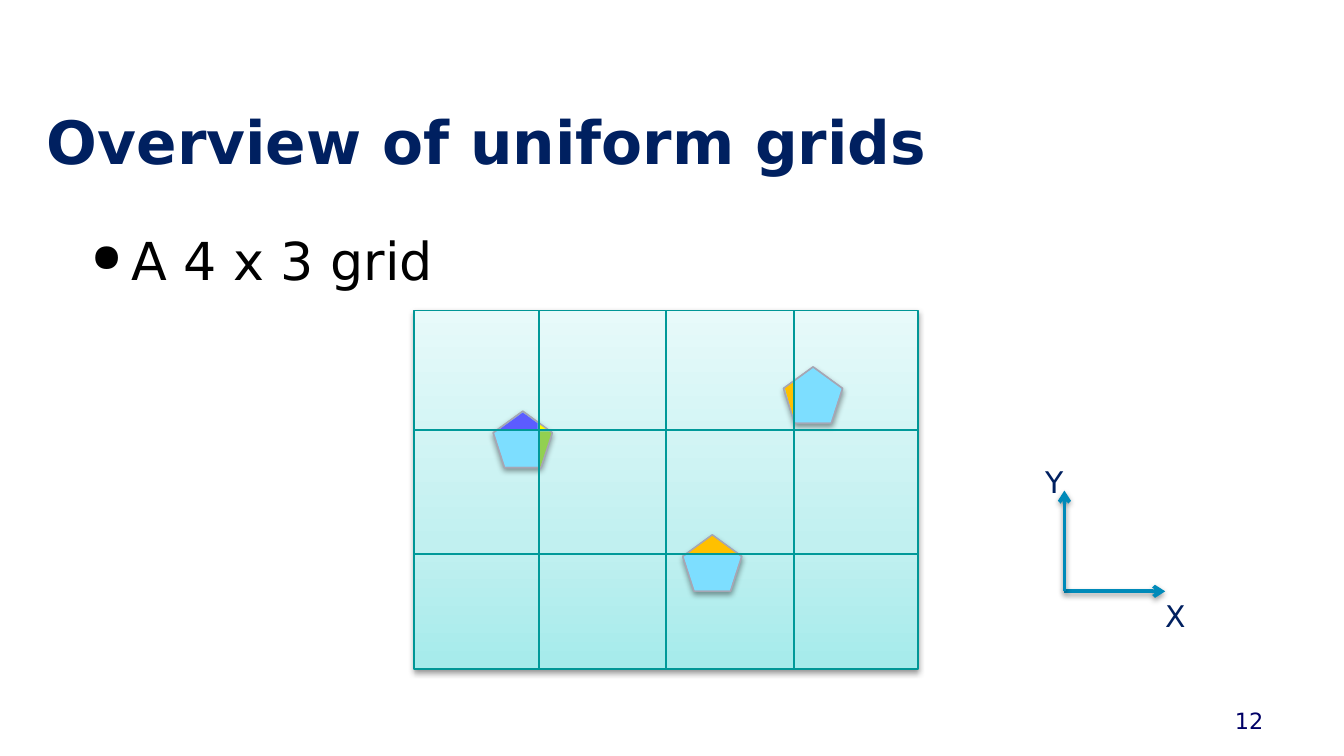
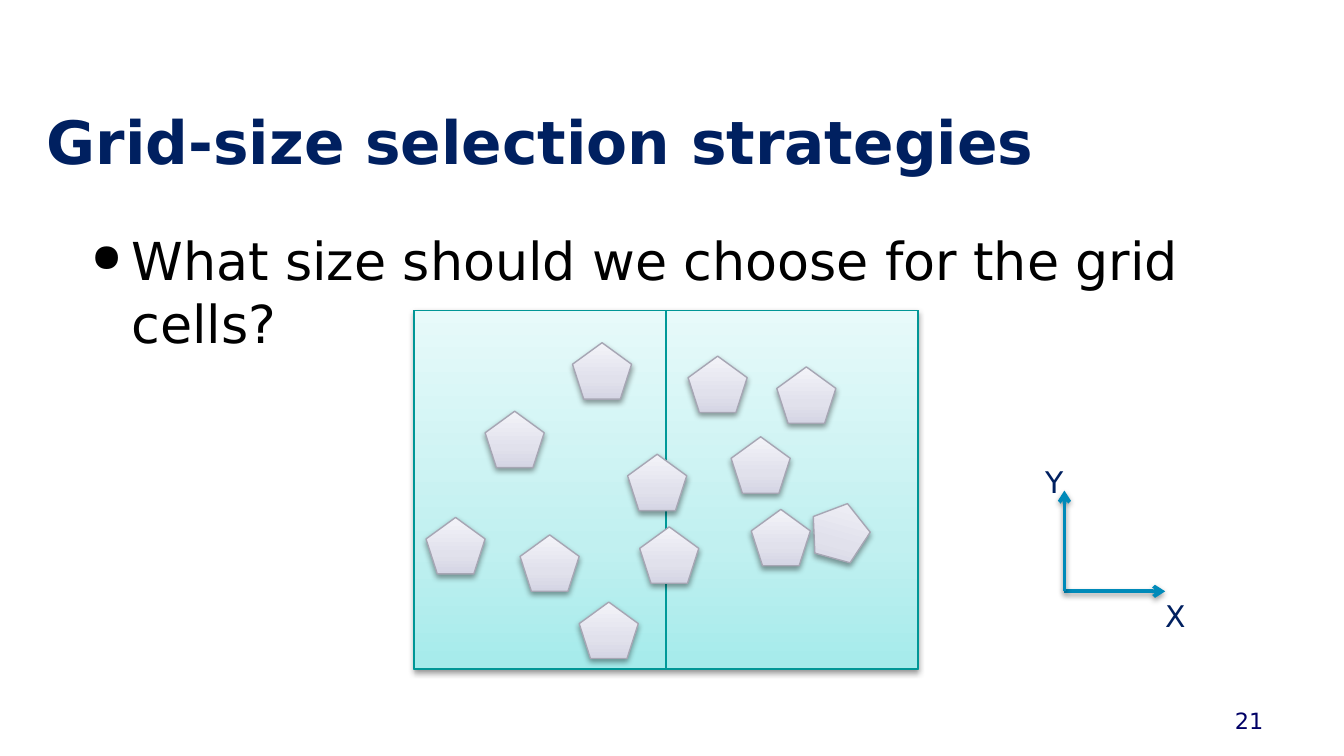
import dataclasses

import lxml.etree
import pptx
import pptx.dml.color
import pptx.enum.shapes
import pptx.enum.text
import pptx.oxml
import pptx.oxml.ns
import pptx.util

# Content: slide wording, grid dividers and pentagon positions (inches)
SLIDES = [
    dict(
        title="Overview of uniform grids", bullet="A 4 x 3 grid", number="12",
        columns=[4.01, 5.91], rows=[3.2, 4.12], fill="cell", framed=False,
        pentagons=[(5.83, 2.73, 0), (3.67, 3.06, 0), (5.08, 3.98, 0)],
        pieces=[
            ("violet", [(3.71, 3.2), (3.89, 3.07), (4, 3.15), (4, 3.2)]),
            ("yellow", [(4.01, 3.15), (4.01, 3.2), (4.09, 3.21)]),
            ("green", [(4.01, 3.49), (4.01, 3.21), (4.08, 3.21), (4.11, 3.22), (4.02, 3.48)]),
            ("amber", [(5.84, 2.89), (5.91, 3.13), (5.91, 2.83)]),
            ("amber", [(5.3, 3.98), (5.11, 4.12), (5.49, 4.12)]),
        ],
    ),
    dict(
        title="Grid-size selection strategies",
        bullet="What size should we choose for the grid cells?", number="21",
        columns=[], rows=[], fill="pale", framed=True,
        pentagons=[
            (3.61, 3.06, 0), (5.78, 2.73, 0), (5.12, 2.65, 0), (4.67, 3.38, 0),
            (4.76, 3.92, 0), (5.44, 3.25, 0), (3.87, 3.98, 0), (4.26, 2.55, 0),
            (3.17, 3.85, 0), (4.31, 4.48, 0), (6.03, 3.74, 15.4), (5.59, 3.79, 0),
        ],
        pieces=[],
    ),
]

PAGE = (10, 10 * 9 / 16)
GRID = (3.08, 2.31, 3.75, 2.67)
PENTAGON = (0.44, 0.42)
ORIGIN, AXIS = (7.92, 4.4), 0.75
AXIS_LABELS = [("X", (8.56, 4.4, 0.36, 0.37)), ("Y", (7.67, 3.4, 0.34, 0.37))]


@dataclasses.dataclass(frozen=True)
class Theme:
    font: str = "DejaVu Sans"
    bullet_font: str = "OpenSymbol"
    title: int = 32
    body: int = 28
    label: int = 16
    number: int = 12
    navy: str = "002060"
    black: str = "000000"
    indigo: str = "000066"
    axis: str = "008AB9"
    border: str = "009696"
    divider: str = "009999"
    edge: str = "A6A6B4"
    cell: str = "7DDEFF"
    violet: str = "5C5CFF"
    yellow: str = "FFFF00"
    green: str = "92D050"
    amber: str = "FFC000"
    aqua: tuple = ((0, "A5EBEB"), (35, "C1F0F0"), (100, "E7FAFA"))
    pale: tuple = ((0, "D5D5E4"), (35, "E1E1EC"), (100, "F3F3F8"))


THEME = Theme()
SHAPE = pptx.enum.shapes.MSO_SHAPE
ALIGN = pptx.enum.text.PP_ALIGN
ANCHOR = pptx.enum.text.MSO_ANCHOR
FIT = pptx.enum.text.MSO_AUTO_SIZE
NAMESPACE = pptx.oxml.ns.nsdecls("a")


def inches(values):
    return [pptx.util.Inches(value) for value in values]


def rgb(code):
    return pptx.dml.color.RGBColor.from_string(code)


def set_all(target, formats):
    for name, value in formats.items():
        setattr(target, name, value)


# Effects and fills
def set_effects(item, shadow):
    """Write an effect list after the line; empty when there is no shadow."""
    outer = (
        '<a:outerShdw blurRad="39370" dist="20320" dir="5400000" rotWithShape="0">'
        '<a:srgbClr val="000000"><a:alpha val="38000"/></a:srgbClr></a:outerShdw>'
    ) if shadow else ""
    item._element.spPr.append(
        pptx.oxml.parse_xml(f"<a:effectLst {NAMESPACE}>{outer}</a:effectLst>"))


def set_fill(shape, fill):
    if fill is None:
        shape.fill.background()
    elif isinstance(fill, str):
        shape.fill.solid()
        shape.fill.fore_color.rgb = rgb(fill)
    else:
        shape.fill.gradient()
        shape.fill.gradient_angle = 90
        stops = shape._element.spPr.find(".//" + pptx.oxml.ns.qn("a:gsLst"))
        for stop in list(stops):
            stops.remove(stop)
        for place, code in fill:
            stops.append(pptx.oxml.parse_xml(
                f'<a:gs {NAMESPACE} pos="{place * 1000}"><a:srgbClr val="{code}"/></a:gs>'))


def finish(shape, fill, edge=None, shadow=False):
    set_fill(shape, fill)
    if edge:
        shape.line.color.rgb = rgb(edge)
        shape.line.width = pptx.util.Pt(0.75)
    else:
        shape.line.fill.background()
    set_effects(shape, shadow)
    return shape


# Parts
def add_bullet(para, color):
    props = para._p.get_or_add_pPr()
    indent = pptx.util.Inches(0.3)
    props.set("marL", str(indent))
    props.set("indent", str(-indent))
    for start, child in (
        ("buClr", f'<a:srgbClr val="{color}"/>'),
        ("buSzPct", 'val="75000"'),
        ("buFont", f'typeface="{THEME.bullet_font}"'),
        ("buChar", 'char="●"'),
    ):
        nested = child.startswith("<")
        props.append(pptx.oxml.parse_xml(
            f"<a:{start} {NAMESPACE}>{child}</a:{start}>" if nested
            else f"<a:{start} {NAMESPACE} {child}/>"))


def add_text(shapes, text, at, size, color, bold=False, align=ALIGN.LEFT,
             anchor=ANCHOR.TOP, wrap=True, bullet=False):
    box = shapes.add_textbox(*inches(at))
    set_all(box.text_frame, dict(
        word_wrap=wrap, vertical_anchor=anchor,
        auto_size=FIT.NONE if wrap else FIT.SHAPE_TO_FIT_TEXT))
    para = box.text_frame.paragraphs[0]
    para.alignment = align
    if bullet:
        add_bullet(para, color)
    span = para.add_run()
    span.text = text
    set_all(span.font, dict(name=THEME.font, size=pptx.util.Pt(size), bold=bold))
    span.font.color.rgb = rgb(color)


def add_line(shapes, start, end, color, width, arrow=False):
    line = shapes.add_connector(
        pptx.enum.shapes.MSO_CONNECTOR.STRAIGHT, *inches(start + end))
    line.line.color.rgb = rgb(color)
    line.line.width = pptx.util.Pt(width)
    if arrow:
        tail = lxml.etree.SubElement(line.line._get_or_add_ln(), pptx.oxml.ns.qn("a:tailEnd"))
        tail.set("type", "arrow")
    set_effects(line, arrow)
    return line


def add_pentagon(page, spot, fill, shadow):
    x, y, angle = spot
    shape = page.shapes.add_shape(SHAPE.REGULAR_PENTAGON, *inches((x, y) + PENTAGON))
    shape.rotation = angle
    finish(shape, fill, THEME.edge, shadow)


def add_piece(page, color, points):
    corners = [tuple(inches(point)) for point in points]
    outline = page.shapes.build_freeform(*corners[0])
    outline.add_line_segments(corners[1:], close=True)
    finish(outline.convert_to_shape(), color)


def add_axes(page):
    group = page.shapes.add_group_shape().shapes
    x, y = ORIGIN
    for end in ((x + AXIS, y), (x, y - AXIS)):
        add_line(group, ORIGIN, end, THEME.axis, 2, arrow=True)
    for text, at in AXIS_LABELS:
        add_text(group, text, at, THEME.label, THEME.navy, align=ALIGN.RIGHT, wrap=False)


def add_frame(page, fill, shadow):
    box = page.shapes.add_shape(SHAPE.RECTANGLE, *inches(GRID))
    return finish(box, fill, THEME.border, shadow)


def add_middle_divider(page, box):
    left, top, width, height = GRID
    middle = left + width / 2
    line = add_line(page.shapes, (middle, top), (middle, top + height), THEME.divider, 1)
    line.begin_connect(box, 0)
    line.end_connect(box, 2)


def add_dividers(page, columns, rows):
    left, top, width, height = GRID
    ends = [((x, top), (x, top + height)) for x in columns]
    ends += [((left, y), (left + width, y)) for y in rows]
    for start, end in ends:
        add_line(page.shapes, start, end, THEME.divider, 1)


def build_slide(deck, content):
    page = deck.slides.add_slide(deck.slide_layouts[6])
    box = add_frame(page, THEME.aqua, True)
    add_text(page.shapes, content["title"], (0.25, 0.73, 9.5, 0.85), THEME.title,
             THEME.navy, bold=True)
    add_text(page.shapes, content["bullet"], (0.58, 1.65, 8.83, 3), THEME.body,
             THEME.black, bullet=True)
    add_axes(page)
    if content["framed"]:
        box = add_frame(page, None, False)
    add_text(page.shapes, content["number"], (7.17, 5.21, 2.33, 0.3), THEME.number,
             THEME.indigo, align=ALIGN.RIGHT, anchor=ANCHOR.MIDDLE)
    add_middle_divider(page, box)
    for spot in content["pentagons"]:
        add_pentagon(page, spot, getattr(THEME, content["fill"]), True)

    # Coloured pieces show which cells a pentagon overlaps
    for color, points in content["pieces"]:
        add_piece(page, getattr(THEME, color), points)
    if content["pieces"]:
        for spot in content["pentagons"]:
            add_pentagon(page, spot, None, False)
    add_dividers(page, content["columns"], content["rows"])


def main():
    deck = pptx.Presentation()
    deck.slide_width, deck.slide_height = inches(PAGE)
    for content in SLIDES:
        build_slide(deck, content)
    deck.save("out.pptx")


if __name__ == "__main__":
    main()
